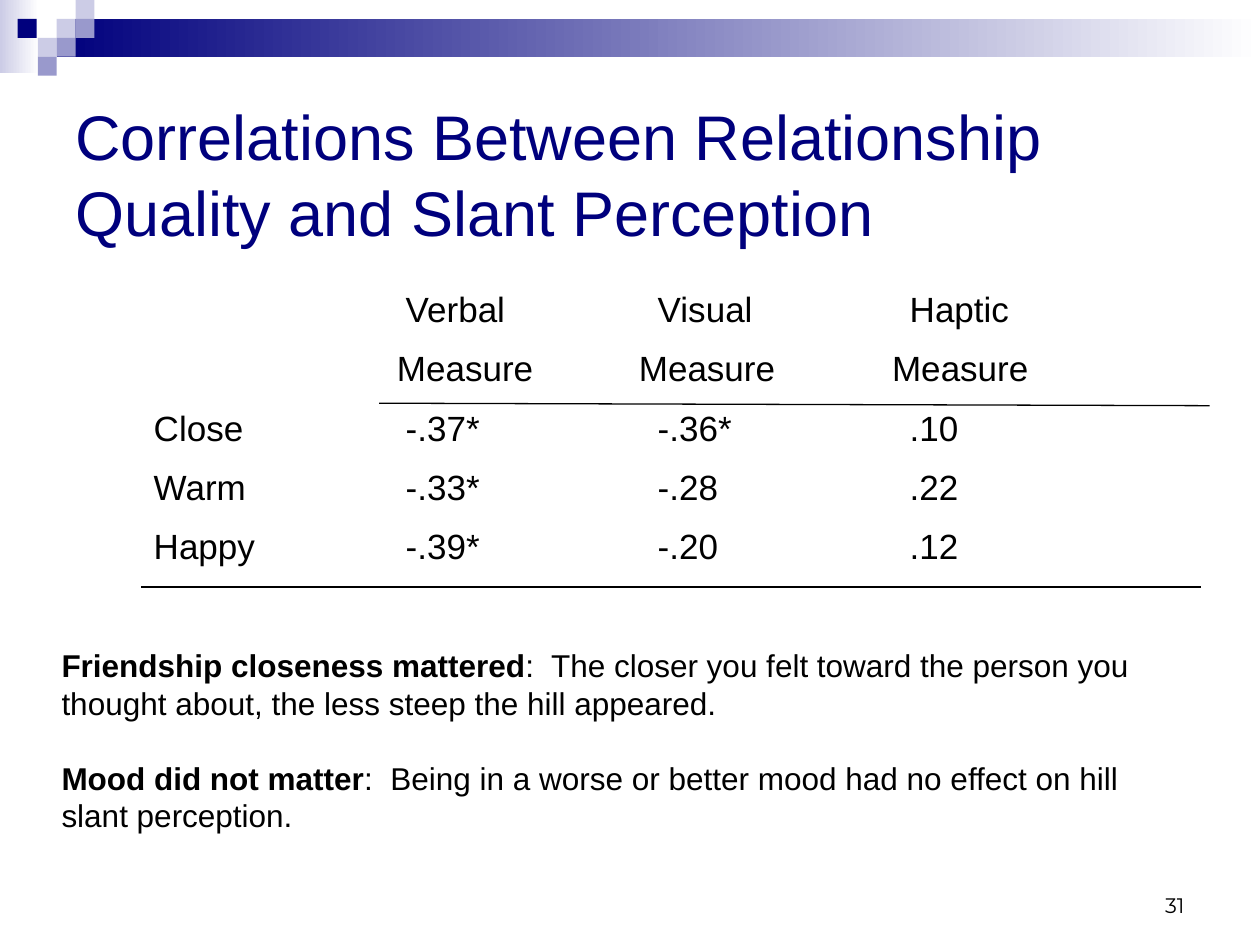
from pptx import Presentation
from pptx.dml.color import RGBColor
from pptx.enum.shapes import MSO_CONNECTOR, MSO_SHAPE
from pptx.enum.text import MSO_ANCHOR as Anchor, PP_ALIGN as Align
from pptx.oxml.ns import qn
from pptx.util import Inches, Pt
from lxml.etree import SubElement

# Content
TITLE = "Correlations Between Relationship Quality and Slant Perception"
ROWS = [
    ["", "Verbal", "Visual", "Haptic"],
    ["", "Measure", "Measure", "Measure"],
    ["Close", "-.37*", "-.36*", ".10"],
    ["Warm", "-.33*", "-.28", ".22"],
    ["Happy", "-.39*", "-.20", ".12"],
]
NOTES = [
    ("Friendship closeness mattered", ":  The closer you felt toward the person you "
     "thought about, the less steep the hill appeared."),
    ("Mood did not matter", ":  Being in a worse or better mood had no effect on hill "
     "slant perception."),
]
PAGE_NUMBER = "31"

NAVY, LILAC, PALE, WHITE, BLACK = "00007D", "9999CC", "CCCCE6", "FFFFFF", "000000"
BANDS = [(0, 0, 0.31, 0.58, PALE), (0.45, 0.15, 9.55, 0.3, NAVY)]
TILE = 0.15
TILES = [(0.45, 0.15, PALE), (0.6, 0, PALE), (0.6, 0.15, LILAC), (0.3, 0.3, PALE),
         (0.14, 0.15, NAVY), (0.45, 0.3, LILAC), (0.3, 0.45, LILAC)]
RULES = [(1.12, 4.66, 9.53, 4.66), (3.01, 3.2, 9.6, 3.22)]

# Table grid: text indent per cell, the "Measure" row hangs further left
TABLE_LEFT, TABLE_TOP, COLUMN_WIDTH, ROW_HEIGHT = 1.02, 2.23, 2, 0.47
INDENT = 0.2
MEASURE_ROW, MEASURE_INDENTS = 1, [0.2, 0.13, 0.05, 0.06]


def color(value):
    return RGBColor.from_string(value)


def add_block(page, left, top, width, height, fill, fade_to=None):
    block = page.shapes.add_shape(MSO_SHAPE.RECTANGLE, *map(Inches, (left, top, width, height)))
    block.shadow.inherit = False
    block.line.fill.background()
    if fade_to:
        block.fill.gradient()
        block.fill.gradient_angle = 0
        for stop, shade in zip(block.fill.gradient_stops, (fill, fade_to)):
            stop.color.rgb = color(shade)
    else:
        block.fill.solid()
        block.fill.fore_color.rgb = color(fill)


def add_span(para, text, size, shade=BLACK, bold=False, font="Arial"):
    span = para.add_run()
    span.text = text
    span.font.size, span.font.bold, span.font.name = Pt(size), bold, font
    span.font.color.rgb = color(shade)


def add_text_frame(page, left, top, width, height, anchor=Anchor.TOP):
    box = page.shapes.add_textbox(*map(Inches, (left, top, width, height)))
    frame = box.text_frame
    frame.word_wrap = True
    frame.vertical_anchor = anchor
    return frame


def add_correlations(page):
    size = COLUMN_WIDTH * len(ROWS[0]), ROW_HEIGHT * len(ROWS)
    table = page.shapes.add_table(len(ROWS), len(ROWS[0]),
                                  *map(Inches, (TABLE_LEFT, TABLE_TOP, *size))).table
    table.first_row = table.horz_banding = False
    for r, row in enumerate(ROWS):
        for c, text in enumerate(row):
            cell = table.cell(r, c)
            cell.fill.background()
            cell.vertical_anchor = Anchor.MIDDLE
            cell.margin_top = cell.margin_bottom = 0
            cell.margin_left = Inches(MEASURE_INDENTS[c] if r == MEASURE_ROW else INDENT)
            if text:
                add_span(cell.text_frame.paragraphs[0], text, 20)


def add_rule(page, *ends):
    rule = page.shapes.add_connector(MSO_CONNECTOR.STRAIGHT, *map(Inches, ends))
    rule.line.width = Pt(0.75)
    rule.line.color.rgb = color(BLACK)
    SubElement(rule._element.spPr, qn("a:effectLst"))


def main():
    deck = Presentation()
    deck.slide_width, deck.slide_height = Inches(10), Inches(7.5)
    page = deck.slides.add_slide(deck.slide_layouts[6])

    # Header decoration
    for *place, fill in BANDS:
        add_block(page, *place, fill, fade_to=WHITE)
    for left, top, fill in TILES:
        add_block(page, left, top, TILE, TILE, fill)

    # Title
    title = add_text_frame(page, 0.5, 0.75, 9, 1.25, Anchor.MIDDLE)
    add_span(title.paragraphs[0], TITLE, 36, NAVY)

    # Correlation table and its rules
    add_correlations(page)
    for ends in RULES:
        add_rule(page, *ends)

    # Findings, one blank line's height apart
    notes = add_text_frame(page, 0.39, 5.08, 8.76, 1.62)
    for i, (finding, detail) in enumerate(NOTES):
        para = notes.add_paragraph() if i else notes.paragraphs[0]
        para.space_before = Pt(21 if i else 0)
        add_span(para, finding, 18, bold=True)
        add_span(para, detail, 18)

    # Page number
    number = add_text_frame(page, 7.17, 6.83, 2.33, 0.5, Anchor.BOTTOM).paragraphs[0]
    number.alignment = Align.RIGHT
    add_span(number, PAGE_NUMBER, 12, font="Montserrat")

    deck.save("out.pptx")


if __name__ == "__main__":
    main()
